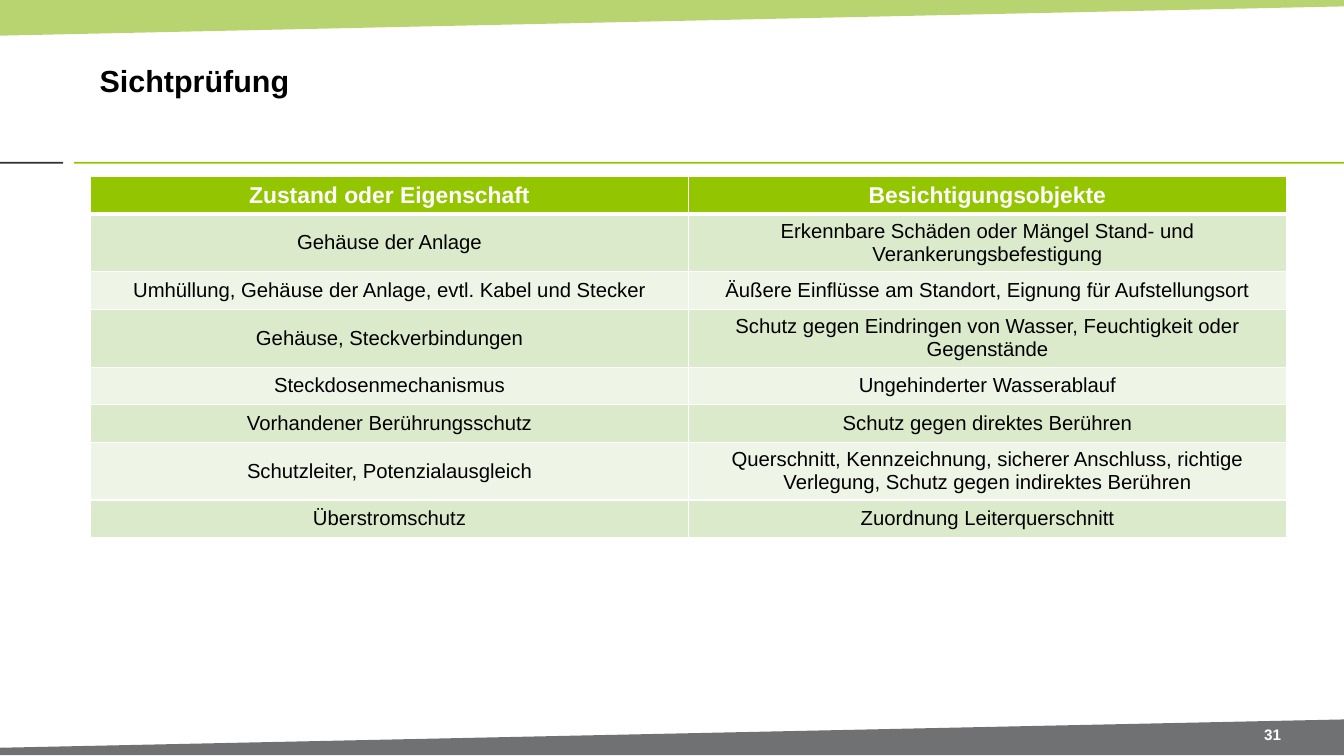
from lxml.etree import SubElement
from pptx import Presentation
from pptx.dml.color import RGBColor
from pptx.enum.shapes import MSO_SHAPE as Shape
from pptx.enum.text import MSO_ANCHOR as Anchor, PP_ALIGN as Align
from pptx.oxml.ns import qn
from pptx.util import Emu, Pt

PX = 9144  # 100 px to the inch
WIDTH, HEIGHT = 1470, 827
FONT = "Arial"
COLORS = {
    "white": "FFFFFF", "black": "000000", "accent": "94C600",
    "leaf": "95C02A", "dark": "313130", "grey": "707173",
    "band": "DCEACC", "pale": "EEF5E7",
}
HEADER = ("Zustand oder Eigenschaft", "Besichtigungsobjekte")
CHECKS = [
    ("Gehäuse der Anlage",
     "Erkennbare Schäden oder Mängel Stand- und\nVerankerungsbefestigung"),
    ("Umhüllung, Gehäuse der Anlage, evtl. Kabel und Stecker",
     "Äußere Einflüsse am Standort, Eignung für Aufstellungsort"),
    ("Gehäuse, Steckverbindungen",
     "Schutz gegen Eindringen von Wasser, Feuchtigkeit oder Gegenstände"),
    ("Steckdosenmechanismus", "Ungehinderter Wasserablauf"),
    ("Vorhandener Berührungsschutz", "Schutz gegen direktes Berühren"),
    ("Schutzleiter, Potenzialausgleich",
     "Querschnitt, Kennzeichnung, sicherer Anschluss, richtige Verlegung, "
     "Schutz gegen indirektes Berühren"),
    ("Überstromschutz", "Zuordnung Leiterquerschnitt"),
]


def px(length):
    return Emu(length * PX)


def rgb(name):
    return RGBColor.from_string(COLORS[name])


def write(frame, text, size=16, color="black", bold=False, align=Align.CENTER):
    """Fill a text frame, one paragraph per line of text."""
    for index, line in enumerate(text.split("\n")):
        para = frame.paragraphs[0] if index == 0 else frame.add_paragraph()
        para.alignment = align
        span = para.add_run()
        span.text = line
        span.font.name = FONT
        span.font.size = Pt(size)
        span.font.bold = bold
        span.font.color.rgb = rgb(color)


class SlideBuilder:
    def __init__(self, deck):
        self.page = deck.slides.add_slide(deck.slide_layouts[6])

    def paint(self, shape, color, alpha=None):
        shape.shadow.inherit = False
        shape.fill.solid()
        shape.fill.fore_color.rgb = rgb(color)
        shape.line.fill.background()
        if alpha:
            tone = shape.fill._xPr.find(qn("a:solidFill"))[0]
            SubElement(tone, qn("a:alpha"), val=str(alpha * 1000))

    def bar(self, left, top, width, height, color):
        shape = self.page.shapes.add_shape(
            Shape.RECTANGLE, px(left), px(top), px(width), px(height))
        self.paint(shape, color)

    def wedge(self, corners, color, alpha=None):
        start, *others = [(px(x), px(y)) for x, y in corners]
        outline = self.page.shapes.build_freeform(*start)
        outline.add_line_segments(others, close=True)
        self.paint(outline.convert_to_shape(), color, alpha)

    def text(self, left, top, width, height, text, **style):
        box = self.page.shapes.add_textbox(
            px(left), px(top), px(width), px(height))
        frame = box.text_frame
        frame.word_wrap = True
        frame.vertical_anchor = Anchor.MIDDLE
        frame.margin_left = frame.margin_right = px(11)
        frame.margin_top = frame.margin_bottom = px(6)
        write(frame, text, **style)

    def borders(self, cell, **widths):
        properties = cell._tc.get_or_add_tcPr()
        for side in "LRTB":
            line = SubElement(properties, qn(f"a:ln{side}"),
                              w=str(Pt(widths.get(side, 1))))
            fill = SubElement(line, qn("a:solidFill"))
            SubElement(fill, qn("a:srgbClr"), val=COLORS["white"])

    def table(self, left, top, column_width, row_height, rows):
        columns = len(rows[0])
        grid = self.page.shapes.add_table(
            len(rows), columns, px(left), px(top),
            px(column_width * columns), px(row_height * len(rows))).table
        for column in grid.columns:
            column.width = px(column_width)
        for row, texts in enumerate(rows):
            for column, text in enumerate(texts):
                cell = grid.cell(row, column)
                cell.vertical_anchor = Anchor.MIDDLE
                cell.margin_left = cell.margin_right = px(10)
                cell.margin_top = cell.margin_bottom = px(5)
                # Thick rule between the header and the body
                self.borders(cell, **{0: {"B": 3}, 1: {"T": 3}}.get(row, {}))
                cell.fill.solid()
                if row == 0:
                    cell.fill.fore_color.rgb = rgb("accent")
                    write(cell.text_frame, text, size=18, color="white", bold=True)
                else:
                    cell.fill.fore_color.rgb = rgb("band" if row % 2 else "pale")
                    write(cell.text_frame, text)


def main():
    deck = Presentation()
    deck.slide_width, deck.slide_height = px(WIDTH), px(HEIGHT)
    slide = SlideBuilder(deck)

    # Slanted bands and title rule
    slide.wedge([(0, 0), (WIDTH, 0), (WIDTH, 7), (0, 39)], "leaf", alpha=67)
    slide.bar(0, 177, 69, 2, "dark")
    slide.bar(81, 177, WIDTH - 81, 2, "accent")
    slide.wedge([(WIDTH, 826), (0, 826), (0, 818), (WIDTH, 787)], "grey")

    # Title and page number
    slide.text(98, 28, 1154, 119, "Sichtprüfung",
               size=24, bold=True, align=Align.LEFT)
    slide.text(1349, 789, 86, 29, "31", size=12, color="white", bold=True)

    # Inspection table
    slide.table(99, 193, 654, 41, [HEADER, *CHECKS])

    deck.save("out.pptx")


if __name__ == "__main__":
    main()
